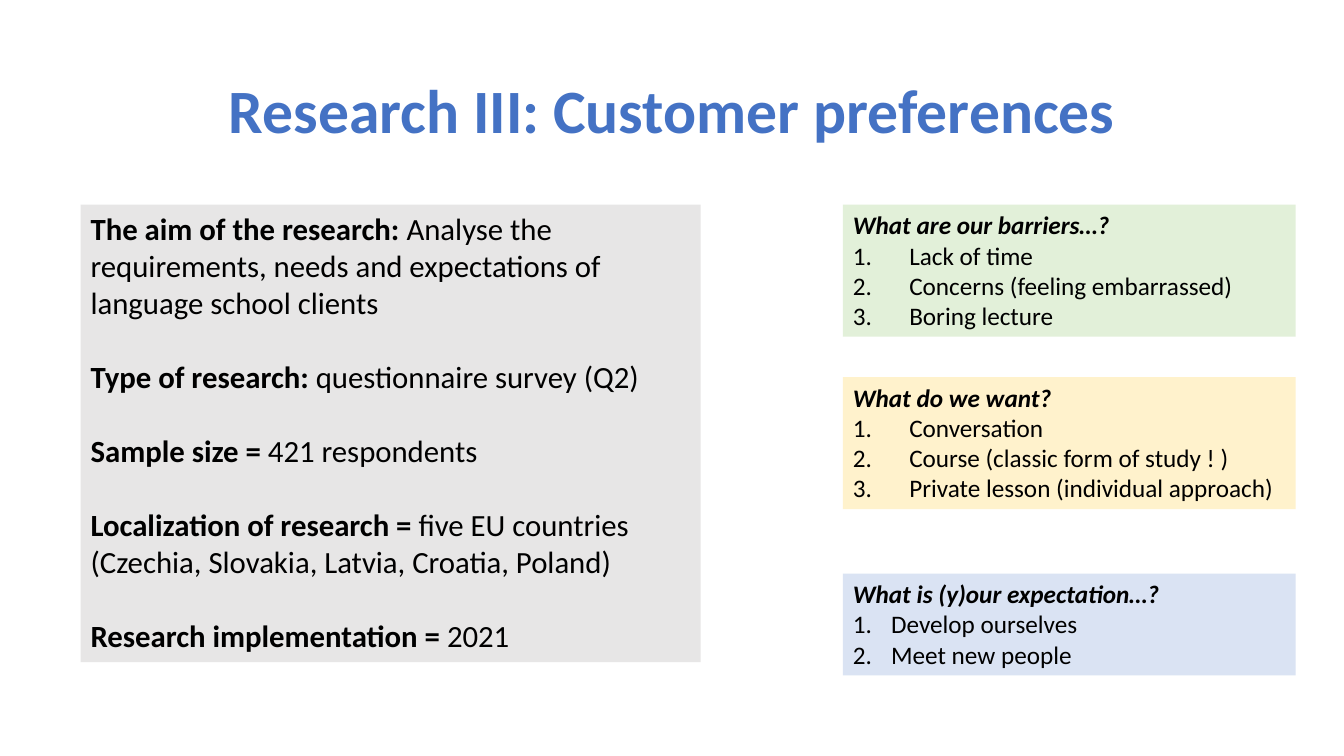
from dataclasses import dataclass

from lxml import etree
from pptx import Presentation
from pptx.dml.color import RGBColor
from pptx.enum.shapes import MSO_SHAPE
from pptx.enum.text import MSO_ANCHOR, MSO_AUTO_SIZE, PP_ALIGN
from pptx.oxml.ns import qn
from pptx.slide import Slide
from pptx.util import Pt

RECTANGLE = MSO_SHAPE.RECTANGLE
TOP, MIDDLE = MSO_ANCHOR.TOP, MSO_ANCHOR.MIDDLE
FIT_SHAPE = MSO_AUTO_SIZE.SHAPE_TO_FIT_TEXT
LEFT, CENTER = PP_ALIGN.LEFT, PP_ALIGN.CENTER
EMU_PER_PX = 9144

FACTS = [
    ("The aim of the research: ",
     "Analyse the requirements, needs and expectations of language school clients"),
    ("Type of research: ", "questionnaire survey (Q2)"),
    ("Sample size = ", "421 respondents"),
    ("Localization of research = ",
     "five EU countries (Czechia, Slovakia, Latvia, Croatia, Poland)"),
    ("Research implementation = ", "2021"),
]
ANSWERS = [
    (203, 131, "E2F0D9", 56, "What are our barriers…?",
     ["Lack of time", "Concerns (feeling embarrassed)", "Boring lecture"]),
    (374, 131, "FFF2CC", 56, "What do we want?",
     ["Conversation", "Course (classic form of study ! )",
      "Private lesson (individual approach)"]),
    (569, 101, "DAE3F3", 38, "What is (y)our expectation…?",
     ["Develop ourselves", "Meet new people"]),
]


def px(length):
    """Turn whole pixels into EMU."""
    return length * EMU_PER_PX


def color(value):
    """Turn a hex string into a colour."""
    return RGBColor.from_string(value)


@dataclass
class SlideBuilder:
    """Draws the elements of the slide in one style."""

    slide: Slide
    font: str = "Calibri"
    ink: str = "000000"
    accent: str = "4472C4"

    def span(self, para, text, size, ink, bold=False, italic=False):
        """Add a formatted run to a paragraph."""
        run = para.add_run()
        run.text = text
        font = run.font
        font.name, font.size = self.font, Pt(size)
        font.bold, font.italic = bold, italic
        font.color.rgb = color(ink)

    def title(self, left, top, width, height, text):
        """Add the centred slide title."""
        frame = self.slide.shapes.add_textbox(
            px(left), px(top), px(width), px(height)).text_frame
        frame.word_wrap = True
        frame.vertical_anchor = MIDDLE
        para = frame.paragraphs[0]
        para.alignment = CENTER
        para.line_spacing = 0.9
        self.span(para, text, 44, self.accent, bold=True)

    def panel(self, left, top, width, height, fill):
        """Add a filled rectangle and return its text frame."""
        box = self.slide.shapes.add_shape(
            RECTANGLE, px(left), px(top), px(width), px(height))
        box.shadow.inherit = False
        box.fill.solid()
        box.fill.fore_color.rgb = color(fill)
        box.line.fill.background()
        frame = box.text_frame
        frame.word_wrap = True
        frame.auto_size = FIT_SHAPE
        frame.vertical_anchor = TOP
        frame.paragraphs[0].alignment = LEFT
        return frame

    def facts(self, left, top, width, height, fill, facts):
        """Add a panel of labelled facts set one line apart."""
        frame = self.panel(left, top, width, height, fill)
        for index, (label, value) in enumerate(facts):
            para = frame.add_paragraph() if index else frame.paragraphs[0]
            para.alignment = LEFT
            if index:
                para.space_before = Pt(26.5)
            self.span(para, label, 22, self.ink, bold=True)
            self.span(para, value, 22, self.ink)

    def ranking(self, left, top, width, height, fill, indent, question, answers):
        """Add a panel with a question and numbered answers."""
        frame = self.panel(left, top, width, height, fill)
        self.span(frame.paragraphs[0], question, 18, self.ink, bold=True, italic=True)
        for answer in answers:
            para = frame.add_paragraph()
            para.alignment = LEFT
            properties = para._p.get_or_add_pPr()
            properties.set("marL", str(px(indent)))
            properties.set("indent", str(-px(indent)))
            etree.SubElement(properties, qn("a:buFont"), typeface="+mj-lt")
            etree.SubElement(properties, qn("a:buAutoNum"), type="arabicPeriod")
            self.span(para, answer, 18, self.ink)


def main():
    """Build and save the deck."""
    deck = Presentation()
    deck.slide_width, deck.slide_height = px(1333), px(750)
    page = SlideBuilder(deck.slides.add_slide(deck.slide_layouts[6]))
    page.title(92, 40, 1150, 145, "Research III: Customer preferences")
    page.facts(80, 203, 615, 454, "E7E6E6", FACTS)
    for top, height, fill, indent, question, answers in ANSWERS:
        page.ranking(836, top, 449, height, fill, indent, question, answers)
    deck.save("out.pptx")


if __name__ == "__main__":
    main()
